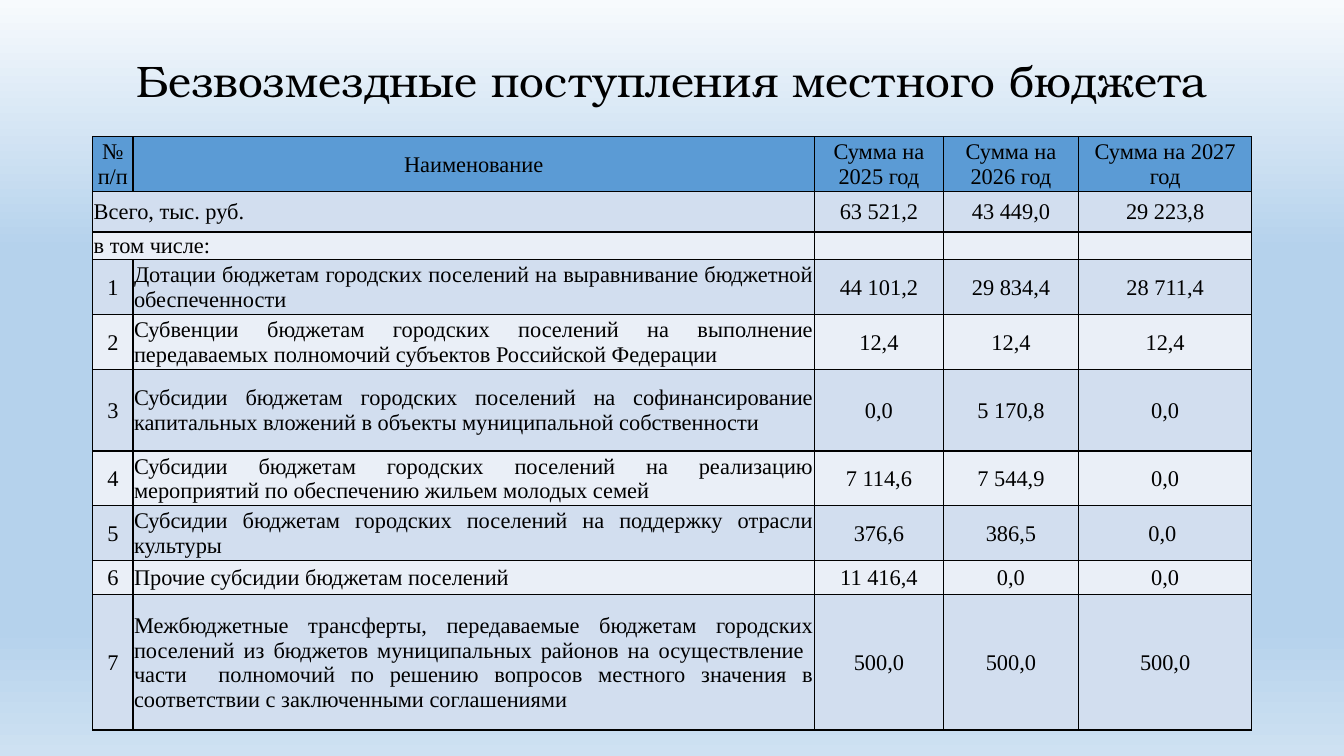
from lxml import etree
from pptx import Presentation
from pptx.dml.color import RGBColor
from pptx.enum.text import MSO_ANCHOR, PP_ALIGN
from pptx.oxml.ns import qn
from pptx.util import Inches, Pt

MID = MSO_ANCHOR.MIDDLE
LEFT, MIDDLE, JUST = PP_ALIGN.LEFT, PP_ALIGN.CENTER, PP_ALIGN.JUSTIFY

BLACK = RGBColor(0x00, 0x00, 0x00)
HEAD = RGBColor(0x5B, 0x9B, 0xD5)
DARK = RGBColor(0xD2, 0xDE, 0xEF)
LIGHT = RGBColor(0xEA, 0xEF, 0xF7)
SKY = [
    (0, RGBColor(0xF7, 0xFA, 0xFD)),
    (33, RGBColor(0xB5, 0xD2, 0xEC)),
    (83, RGBColor(0xB5, 0xD2, 0xEC)),
    (100, RGBColor(0xCE, 0xE1, 0xF2)),
]

WIDE, HIGH = Inches(13.33), Inches(7.5)
COLS = [0.4, 6.76, 1.28, 1.34, 1.72]
TALL = [0.54, 0.4, 0.27, 0.54, 0.54, 0.81, 0.54, 0.54, 0.34, 1.34]

TITLE = "Безвозмездные поступления местного бюджета"
ROWS = [
    ("№ п/п", "Наименование", "Сумма на 2025 год", "Сумма на 2026 год",
     "Сумма на 2027 год"),
    ("Всего, тыс. руб.", None, "63 521,2", "43 449,0", "29 223,8"),
    ("в том числе:", None, "", "", ""),
    ("1", "Дотации бюджетам городских поселений на выравнивание бюджетной "
     "обеспеченности", "44 101,2", "29 834,4", "28 711,4"),
    ("2", "Субвенции бюджетам городских поселений на выполнение "
     "передаваемых полномочий субъектов Российской Федерации",
     "12,4", "12,4", "12,4"),
    ("3", "Субсидии бюджетам городских поселений на софинансирование "
     "капитальных вложений в объекты муниципальной собственности",
     "0,0", "5 170,8", "0,0"),
    ("4", "Субсидии бюджетам городских поселений на реализацию "
     "мероприятий по обеспечению жильем молодых семей",
     "7 114,6", "7 544,9", "0,0"),
    ("5", "Субсидии бюджетам городских поселений на поддержку отрасли "
     "культуры", "376,6", "386,5", "0,0 "),
    ("6", "Прочие субсидии бюджетам поселений", "11 416,4", "0,0", "0,0"),
    ("7", "Межбюджетные трансферты, передаваемые бюджетам городских "
     "поселений из бюджетов муниципальных районов на осуществление  "
     "части  полномочий по решению вопросов местного значения в "
     "соответствии с заключенными соглашениями",
     "500,0", "500,0", "500,0"),
]


def style(para, font, size, align):
    para.alignment = align
    para.font.name = font
    para.font.size = Pt(size)
    para.font.color.rgb = BLACK


def paint(slide):
    """Vertical gradient behind the slide."""
    fill = slide.background.fill
    fill.gradient()
    fill.gradient_angle = 270
    stops = slide.element.find(".//" + qn("a:gsLst"))
    for stop in list(stops):
        stops.remove(stop)
    for share, color in SKY:
        stop = etree.SubElement(stops, qn("a:gs"), pos=str(share * 1000))
        etree.SubElement(stop, qn("a:srgbClr"), val=str(color))


def title(slide, x, y, w, h):
    frame = slide.shapes.add_textbox(x, y, w, h).text_frame
    frame.word_wrap = True
    frame.vertical_anchor = MID
    para = frame.paragraphs[0]
    para.text = TITLE
    para.line_spacing = 0.9
    style(para, "TeX Gyre Bonum", 31.5, MIDDLE)


def border(cell):
    """Thin black line on all four sides, placed ahead of the fill."""
    props = cell._tc.get_or_add_tcPr()
    for spot, side in enumerate(("a:lnL", "a:lnR", "a:lnT", "a:lnB")):
        line = etree.Element(qn(side), w=str(Pt(1)))
        solid = etree.SubElement(line, qn("a:solidFill"))
        etree.SubElement(solid, qn("a:srgbClr"), val=str(BLACK))
        props.insert(spot, line)


def fill_cell(cell, text, color, align):
    cell.fill.solid()
    cell.fill.fore_color.rgb = color
    cell.vertical_anchor = MID
    cell.margin_left = cell.margin_right = cell.margin_top = Inches(0.01)
    cell.margin_bottom = 0
    para = cell.text_frame.paragraphs[0]
    if text:
        para.text = text
    style(para, "Times New Roman", 16, align)
    border(cell)


def budget(slide, x, y, w, h):
    """Table whose columns and rows share out the given box."""
    table = slide.shapes.add_table(len(ROWS), len(COLS), x, y, w, h).table
    for col, part in zip(table.columns, COLS):
        col.width = int(w * part / sum(COLS))
    for row, part in zip(table.rows, TALL):
        row.height = int(h * part / sum(TALL))

    for r, texts in enumerate(ROWS):
        color = HEAD if r == 0 else DARK if r % 2 else LIGHT
        wide = texts[1] is None
        for c, text in enumerate(texts):
            align = MIDDLE
            if wide and c == 0:
                align = LEFT
            elif r and c == 1:
                align = JUST
            fill_cell(table.cell(r, c), text, color, align)
        if wide:
            table.cell(r, 0).merge(table.cell(r, 1))


def main():
    deck = Presentation()
    deck.slide_width, deck.slide_height = WIDE, HIGH
    slide = deck.slides.add_slide(deck.slide_layouts[6])
    paint(slide)
    edge, span = int(WIDE * 0.069), int(WIDE * 0.8625)
    title(slide, edge, int(HIGH * 0.04), span, int(HIGH * 0.14))
    budget(slide, edge, int(HIGH * 0.181), span, int(HIGH * 0.782))
    deck.save("out.pptx")


if __name__ == "__main__":
    main()
